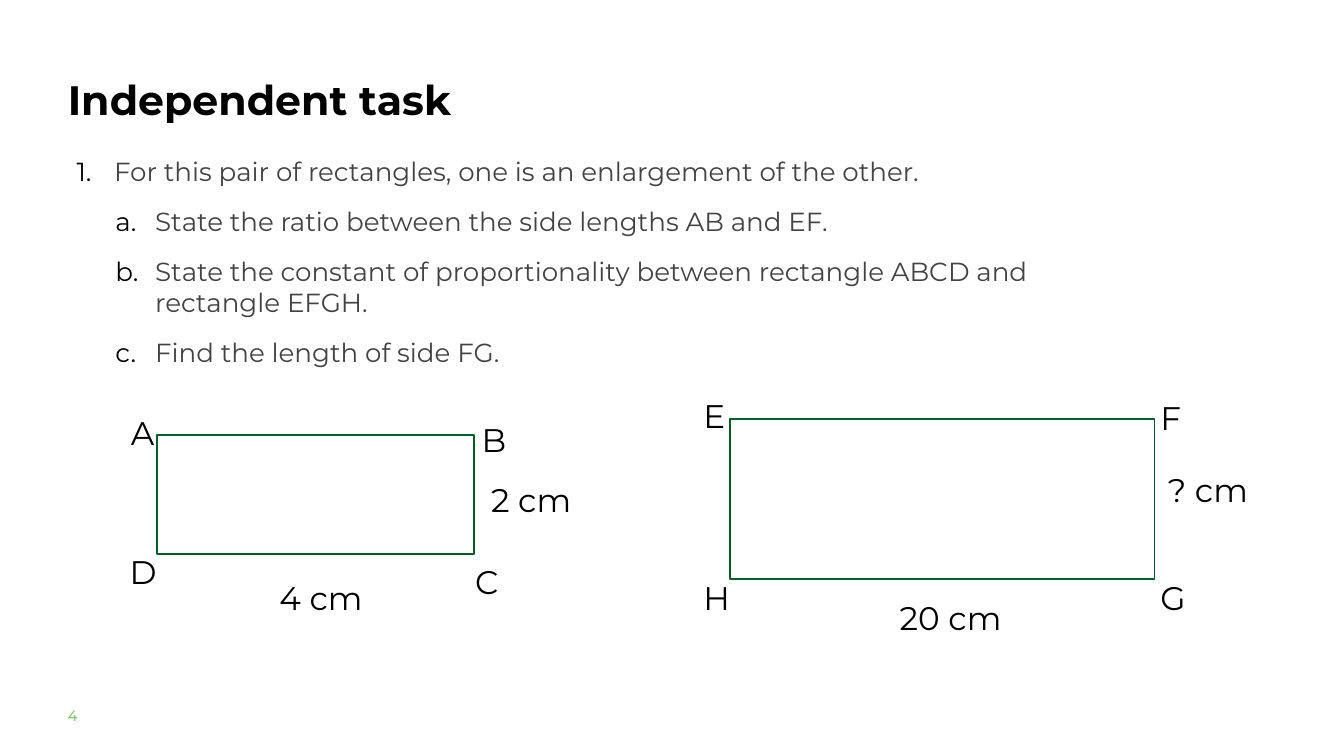
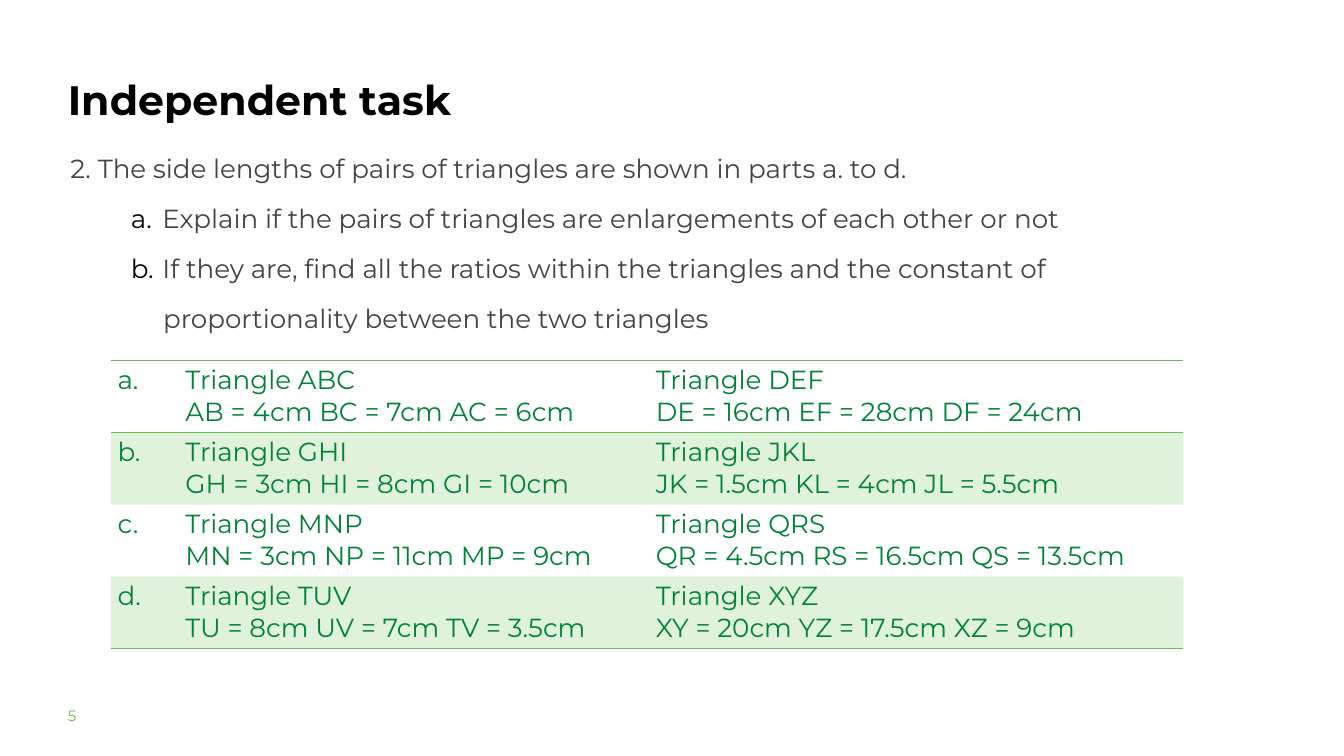
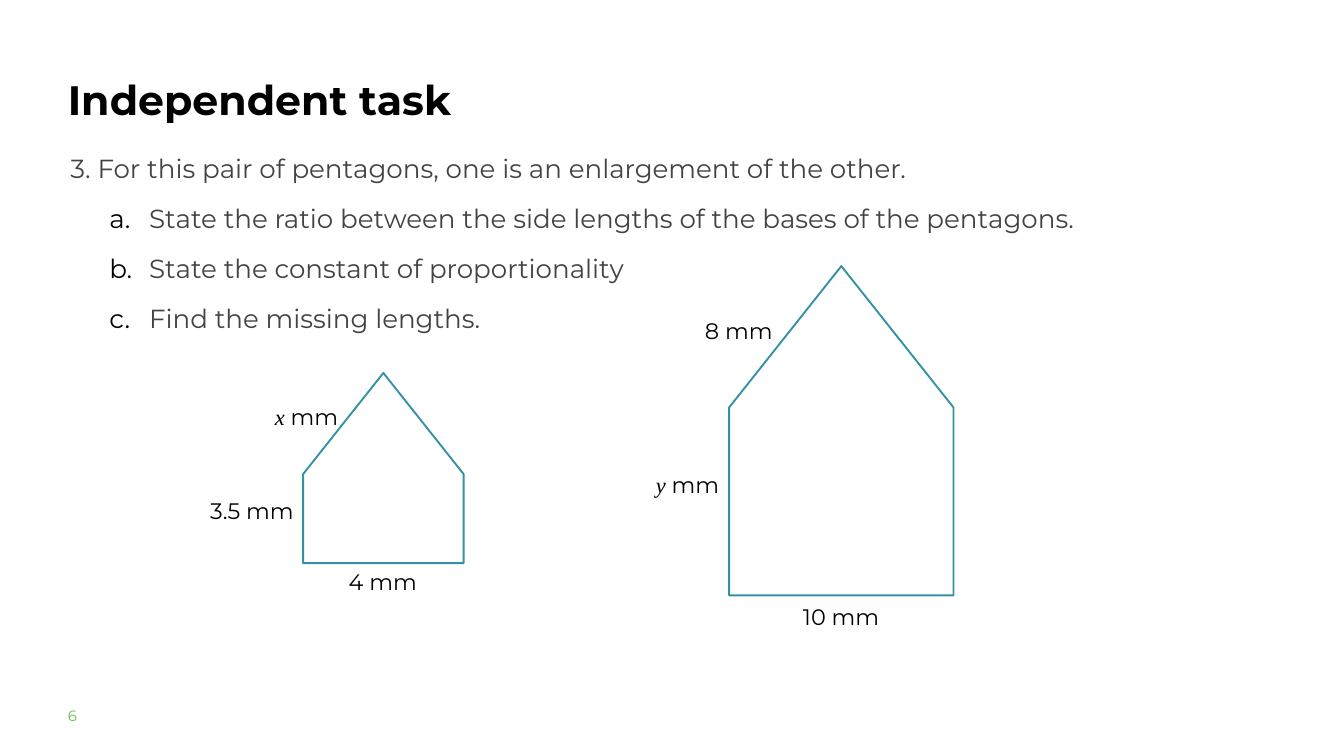
from dataclasses import dataclass

from lxml.etree import SubElement
from pptx import Presentation
from pptx.dml.color import RGBColor
from pptx.enum.shapes import MSO_SHAPE
from pptx.oxml.ns import qn
from pptx.util import Inches, Pt

BLACK = RGBColor(0x00, 0x00, 0x00)
GREY = RGBColor(0x43, 0x43, 0x43)
LIGHT_GREEN = RGBColor(0x65, 0xBE, 0x4B)
TABLE_GREEN = RGBColor(0x00, 0x82, 0x37)
DARK_GREEN = RGBColor(0x00, 0x5E, 0x28)
TEAL = RGBColor(0x33, 0x91, 0xA4)

MAIN_FONT = "Montserrat"
TITLE_FORMAT = {"name": MAIN_FONT, "size": Pt(44), "bold": True}
FOOTER_FORMAT = {"name": MAIN_FONT, "size": Pt(16)}
BODY_FORMAT = {"name": MAIN_FONT, "size": Pt(28)}
CENTIMETRE_FORMAT = {"name": MAIN_FONT, "size": Pt(35)}
MILLIMETRE_FORMAT = {"name": MAIN_FONT, "size": Pt(24)}
VARIABLE_FORMAT = {"name": "Times New Roman", "size": Pt(24), "italic": True}

NO_STYLE_TABLE = "{2D5ABB26-0587-4C30-8999-92F81FD0307C}"
COLUMN_WIDTHS = (1.01, 7, 7.95)
ROW_HEIGHT = 1.07


@dataclass(frozen=True)
class ListStyle:
    """Level, indents and numbering of a body line."""
    level: int = 0
    margin: float = 0
    indent: float = 0
    numbering: str = ""


@dataclass(frozen=True)
class BodyLine:
    """One paragraph of the task text."""
    text: str
    style: ListStyle


@dataclass(frozen=True)
class Label:
    """A short text beside a figure, led by an optional variable."""
    left: float
    top: float
    width: float
    text: str
    variable: str = ""


@dataclass(frozen=True)
class Figure:
    """An outlined polygon."""
    left: float
    top: float
    width: float
    height: float


PLAIN = ListStyle()
QUESTION = ListStyle(0, 0.56, -0.56, "arabicPeriod")
PART = ListStyle(1, 1.17, -0.59, "alphaLcPeriod")
TRIANGLE_PART = ListStyle(0, 1.37, -0.47, "alphaLcPeriod")
CONTINUATION = ListStyle(0, 1.85, -0.47)

RECTANGLE_TASK = (
    BodyLine("For this pair of rectangles, one is an enlargement of the other.", QUESTION),
    BodyLine("State the ratio between the side lengths AB and EF.", PART),
    BodyLine("State the constant of proportionality between rectangle ABCD and rectangle EFGH.", PART),
    BodyLine("Find the length of side FG.", PART),
)
TRIANGLE_TASK = (
    BodyLine("2. The side lengths of pairs of triangles are shown in parts a. to d.", PLAIN),
    BodyLine("Explain if the pairs of triangles are enlargements of each other or not", TRIANGLE_PART),
    BodyLine("If they are, find all the ratios within the triangles and the constant of", TRIANGLE_PART),
    BodyLine("proportionality between the two triangles", CONTINUATION),
)
PENTAGON_TASK = (
    BodyLine("3. For this pair of pentagons, one is an enlargement of the other.", PLAIN),
    BodyLine("State the ratio between the side lengths of the bases of the pentagons.", PART),
    BodyLine("State the constant of proportionality", PART),
    BodyLine("Find the missing lengths.", PART),
)

RECTANGLES = (Figure(2.34, 6.48, 4.72, 1.77), Figure(10.86, 6.23, 6.32, 2.39))
PENTAGONS = (Figure(4.29, 5.77, 2.83, 2.39), Figure(10.07, 4.74, 4.9, 3.34))
VERTEX_WIDTH = 0.49
RECTANGLE_LABELS = (
    Label(1.85, 5.92, VERTEX_WIDTH, "A"),
    Label(7.07, 6.02, VERTEX_WIDTH, "B"),
    Label(1.83, 7.99, VERTEX_WIDTH, "D"),
    Label(6.97, 8.13, VERTEX_WIDTH, "C"),
    Label(10.37, 5.67, VERTEX_WIDTH, "E"),
    Label(17.17, 5.69, VERTEX_WIDTH, "F"),
    Label(10.37, 8.37, VERTEX_WIDTH, "H"),
    Label(17.17, 8.37, VERTEX_WIDTH, "G"),
    Label(7.21, 6.91, 1.45, "2 cm"),
    Label(4.06, 8.37, 1.45, "4 cm"),
    Label(17.28, 6.77, 1.45, "? cm"),
    Label(13.29, 8.67, 1.73, "20 cm"),
)
PENTAGON_LABELS = (
    Label(5.09, 8.4, 1.23, "4 mm"),
    Label(3.03, 7.35, 1.46, "3.5 mm"),
    Label(11.85, 8.93, 1.35, "10 mm"),
    Label(9.66, 6.96, 1.19, " mm", "y"),
    Label(10.39, 4.67, 1.22, "8 mm"),
    Label(3.99, 5.95, 1.19, " mm", "x"),
)
TRIANGLES = (
    ("a.", "Triangle ABC\nAB = 4cm BC = 7cm AC = 6cm", "Triangle DEF\nDE = 16cm EF = 28cm DF = 24cm"),
    ("b.", "Triangle GHI\nGH = 3cm HI = 8cm GI = 10cm", "Triangle JKL\nJK = 1.5cm KL = 4cm JL = 5.5cm"),
    ("c.", "Triangle MNP\nMN = 3cm NP = 11cm MP = 9cm", "Triangle QRS\nQR = 4.5cm RS = 16.5cm QS = 13.5cm"),
    ("d.", "Triangle TUV\nTU = 8cm UV = 7cm TV = 3.5cm", "Triangle XYZ\nXY = 20cm YZ = 17.5cm XZ = 9cm"),
)
ROW_BORDERS = {0: ("a:lnT", "a:lnB"), 3: ("a:lnB",)}


def add_run(paragraph, text: str, formats: dict, color: RGBColor) -> None:
    """Append a formatted run."""
    run = paragraph.add_run()
    run.text = text
    for name, value in formats.items():
        setattr(run.font, name, value)
    run.font.color.rgb = color


def add_text_frame(slide, left: float, top: float, width: float, height: float):
    """Add a wrapping text box and return its frame."""
    shape = slide.shapes.add_textbox(Inches(left), Inches(top), Inches(width), Inches(height))
    shape.text_frame.word_wrap = True
    return shape.text_frame


def add_heading(slide, number: int) -> None:
    """Add the shared title and the slide number."""
    for box, text, formats, color in (
        ((0.91, 0.84, 7.11, 0.98), "Independent task", TITLE_FORMAT, BLACK),
        ((0.91, 10.38, 0.89, 0.42), str(number), FOOTER_FORMAT, LIGHT_GREEN),
    ):
        paragraph = add_text_frame(slide, *box).paragraphs[0]
        paragraph.line_spacing = 1.3
        add_run(paragraph, text, formats, color)


def apply_list_style(paragraph, style: ListStyle) -> None:
    """Set the level, indents and numbering of a paragraph."""
    paragraph.level = style.level
    properties = paragraph._p.get_or_add_pPr()
    properties.set("marL", str(Inches(style.margin)))
    properties.set("indent", str(Inches(style.indent)))
    if style.numbering:
        bullet_color = SubElement(properties, qn("a:buClr"))
        SubElement(bullet_color, qn("a:srgbClr"), val=str(BLACK))
        SubElement(properties, qn("a:buAutoNum"), type=style.numbering)


def add_body(slide, lines: tuple[BodyLine, ...], left: float = 0.95, top: float = 2.22,
             width: float = 16.66, height: float = 2.83) -> None:
    """Add the task text."""
    frame = add_text_frame(slide, left, top, width, height)
    for index, line in enumerate(lines):
        paragraph = frame.add_paragraph() if index else frame.paragraphs[0]
        apply_list_style(paragraph, line.style)
        if index:
            paragraph.space_before = Pt(20)
        add_run(paragraph, line.text, BODY_FORMAT, GREY)


def add_figure(slide, preset: MSO_SHAPE, figure: Figure, color: RGBColor):
    """Add an unfilled outline and return it."""
    shape = slide.shapes.add_shape(preset, Inches(figure.left), Inches(figure.top),
                                   Inches(figure.width), Inches(figure.height))
    shape.shadow.inherit = False
    shape.fill.background()
    shape.line.color.rgb = color
    shape.line.width = Pt(2)
    return shape


def add_label(slide, label: Label, height: float, formats: dict, spacing: float) -> None:
    """Add a vertex or length label."""
    paragraph = add_text_frame(slide, label.left, label.top, label.width, height).paragraphs[0]
    paragraph.line_spacing = spacing
    if label.variable:
        add_run(paragraph, label.variable, VARIABLE_FORMAT, BLACK)
    add_run(paragraph, label.text, formats, BLACK)


def style_cell(cell, row: int) -> None:
    """Draw the borders and the banded fill of a cell."""
    properties = cell._tc.get_or_add_tcPr()
    for border in ROW_BORDERS.get(row, ()):
        line = SubElement(properties, qn(border), w=str(Pt(1)))
        SubElement(SubElement(line, qn("a:solidFill")), qn("a:srgbClr"), val=str(LIGHT_GREEN))
    if row % 2:
        cell.fill.solid()
        cell.fill.fore_color.rgb = LIGHT_GREEN
        fill_color = properties.find(qn("a:solidFill")).find(qn("a:srgbClr"))
        SubElement(fill_color, qn("a:alpha"), val="20000")
    else:
        cell.fill.background()


def add_triangle_table(slide) -> None:
    """Add the table of triangle pairs."""
    table = slide.shapes.add_table(
        len(TRIANGLES), len(COLUMN_WIDTHS), Inches(1.65), Inches(5.37),
        Inches(sum(COLUMN_WIDTHS)), Inches(ROW_HEIGHT * len(TRIANGLES))).table
    table.first_row = table.horz_banding = False
    table._tbl.tblPr.find(qn("a:tableStyleId")).text = NO_STYLE_TABLE
    for column, width in zip(table.columns, COLUMN_WIDTHS):
        column.width = Inches(width)
    for row, texts in enumerate(TRIANGLES):
        table.rows[row].height = Inches(ROW_HEIGHT)
        for column, text in enumerate(texts):
            cell = table.cell(row, column)
            style_cell(cell, row)
            for index, line in enumerate(text.split("\n")):
                frame = cell.text_frame
                paragraph = frame.add_paragraph() if index else frame.paragraphs[0]
                add_run(paragraph, line, BODY_FORMAT, TABLE_GREEN)


def build_rectangles(slide) -> None:
    """Build the rectangle task."""
    add_body(slide, RECTANGLE_TASK, 1.04, 2.26, 14.45, 3.3)
    for rectangle in RECTANGLES:
        add_figure(slide, MSO_SHAPE.RECTANGLE, rectangle, DARK_GREEN)
    for label in RECTANGLE_LABELS:
        add_label(slide, label, 0.8, CENTIMETRE_FORMAT, 1.3)


def build_triangles(slide) -> None:
    """Build the triangle task."""
    add_body(slide, TRIANGLE_TASK)
    add_triangle_table(slide)


def build_pentagons(slide) -> None:
    """Build the pentagon task."""
    for pentagon in PENTAGONS:
        shape = add_figure(slide, MSO_SHAPE.PENTAGON, pentagon, TEAL)
        shape.adjustments[0] = 0.63
        shape.rotation = 270
    for label in PENTAGON_LABELS:
        add_label(slide, label, 0.5, MILLIMETRE_FORMAT, 1.0)
    add_body(slide, PENTAGON_TASK)


def main() -> None:
    """Build and save the presentation."""
    presentation = Presentation()
    presentation.slide_width = Inches(20)
    presentation.slide_height = Inches(11.25)
    builders = (build_rectangles, build_triangles, build_pentagons)
    for number, build in enumerate(builders, start=4):
        slide = presentation.slides.add_slide(presentation.slide_layouts[6])
        add_heading(slide, number)
        build(slide)
    presentation.save("out.pptx")


if __name__ == "__main__":
    main()
